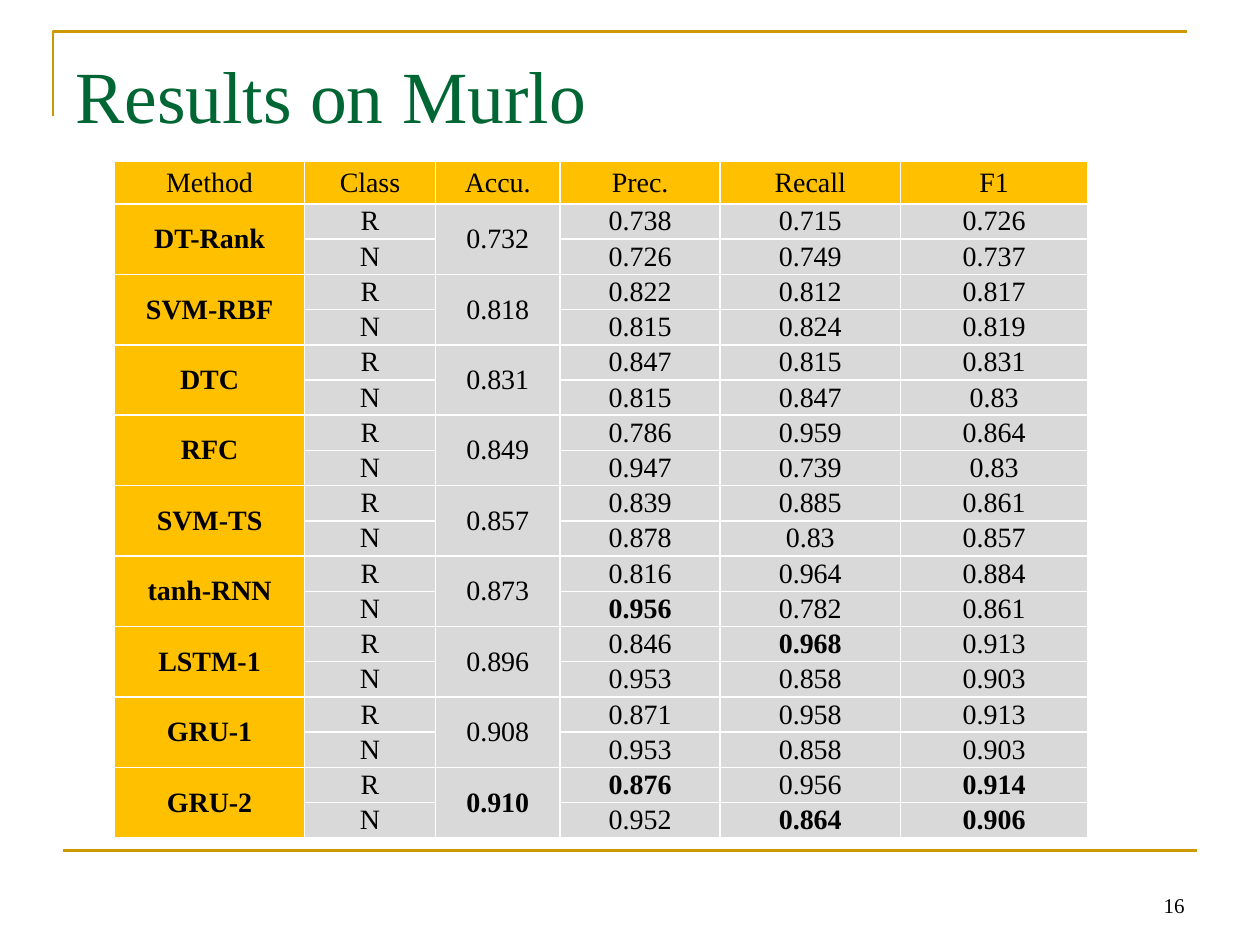
from pptx import Presentation
from pptx.dml.color import RGBColor as Rgb
from pptx.enum.shapes import MSO_CONNECTOR as Link
from pptx.enum.text import MSO_ANCHOR as Anchor, MSO_AUTO_SIZE as Auto, PP_ALIGN as Align
from pptx.util import Cm, Pt
from lxml.etree import SubElement as Sub
from pptx.oxml.ns import qn

theme = {
    "font": "Times New Roman",
    "green": Rgb(0x00, 0x66, 0x33),
    "black": Rgb(0, 0, 0),
    "rule": Rgb(0xCC, 0x99, 0x00),
    "gold": Rgb(0xFF, 0xC0, 0x00),
    "gray": Rgb(0xD9, 0xD9, 0xD9),
    "edge": "FFFFFF",
    "title": Pt(42),
    "cell": Pt(16),
    "page": Pt(12),
    "thin": Pt(1),
    "line": Pt(1.5),
}

heads = ["Method", "Class", "Accu.", "Prec.", "Recall", "F1"]
widths = [3.83, 2.64, 2.51, 3.23, 3.63, 3.78]
data = [
    ("DT-Rank", "0.732", "0.738 0.715 0.726", "0.726 0.749 0.737"),
    ("SVM-RBF", "0.818", "0.822 0.812 0.817", "0.815 0.824 0.819"),
    ("DTC", "0.831", "0.847 0.815 0.831", "0.815 0.847 0.83"),
    ("RFC", "0.849", "0.786 0.959 0.864", "0.947 0.739 0.83"),
    ("SVM-TS", "0.857", "0.839 0.885 0.861", "0.878 0.83 0.857"),
    ("tanh-RNN", "0.873", "0.816 0.964 0.884", "0.956* 0.782 0.861"),
    ("LSTM-1", "0.896", "0.846 0.968* 0.913", "0.953 0.858 0.903"),
    ("GRU-1", "0.908", "0.871 0.958 0.913", "0.953 0.858 0.903"),
    ("GRU-2", "0.910*", "0.876* 0.956 0.914*", "0.952 0.864* 0.906*"),
]


def write(frame, text, size, color, align, bold=False):
    para = frame.paragraphs[0]
    para.alignment = align
    run = para.add_run()
    run.text = text
    form = {"name": theme["font"], "size": theme[size], "bold": bold}
    for key, val in form.items():
        setattr(run.font, key, val)
    run.font.color.rgb = theme[color]


def trim(cell):
    props = cell._tc.get_or_add_tcPr()
    for pos, side in enumerate(["lnL", "lnR", "lnT", "lnB"]):
        line = Sub(props, qn(f"a:{side}"), w=str(theme["thin"]))
        Sub(Sub(line, qn("a:solidFill")), qn("a:srgbClr"), val=theme["edge"])
        props.remove(line)
        props.insert(pos, line)


deck = Presentation()
deck.slide_width, deck.slide_height = Cm(25.4), Cm(19.05)
slide = deck.slides.add_slide(deck.slide_layouts[5])
shapes = slide.shapes

pen = shapes.build_freeform(Cm(1.07), Cm(2.34))
pen.add_line_segments([(Cm(1.07), Cm(0.64)), (Cm(23.93), Cm(0.64))], close=False)
frame = pen.convert_to_shape()
frame.shadow.inherit = False
frame.fill.background()
base = shapes.add_connector(Link.STRAIGHT, Cm(1.27), Cm(17.15), Cm(24.13), Cm(17.15))
Sub(base._element.spPr, qn("a:effectLst"))
for rule in (frame, base):
    rule.line.color.rgb = theme["rule"]
    rule.line.width = theme["line"]

title = shapes.title
place = {"left": Cm(1.27), "top": Cm(0.76), "width": Cm(22.86), "height": Cm(2.16)}
for key, val in place.items():
    setattr(title, key, val)
page = shapes.add_textbox(Cm(18.21), Cm(17.35), Cm(5.92), Cm(1.27))
form = {"word_wrap": True, "auto_size": Auto.NONE, "vertical_anchor": Anchor.BOTTOM}
for box in (title, page):
    for key, val in form.items():
        setattr(box.text_frame, key, val)
write(title.text_frame, "Results on Murlo", "title", "green", Align.LEFT)
write(page.text_frame, "16", "page", "black", Align.RIGHT)

rows = [heads]
for name, accu, rumor, non in data:
    rows.append([name, "R", accu, *rumor.split()])
    rows.append(["", "N", "", *non.split()])

high = [0.85] + [0.71] * (len(rows) - 1)
table = shapes.add_table(len(rows), len(heads), Cm(2.31), Cm(3.26),
                         Cm(sum(widths)), Cm(sum(high))).table
table.first_row = table.horz_banding = False
for col, width in zip(table.columns, widths):
    col.width = Cm(width)
for row, tall in zip(table.rows, high):
    row.height = Cm(tall)

for r, row in enumerate(rows):
    for c, text in enumerate(row):
        cell = table.cell(r, c)
        pad = Cm(0.02) if r and c > 2 else 0
        form = {"margin_left": pad, "margin_right": pad, "margin_top": pad,
                "margin_bottom": pad, "vertical_anchor": Anchor.MIDDLE}
        for key, val in form.items():
            setattr(cell, key, val)
        cell.fill.solid()
        cell.fill.fore_color.rgb = theme["gold" if r == 0 or c == 0 else "gray"]
        trim(cell)
        if text:
            bold = text.endswith("*") or (r > 0 and c == 0)
            write(cell.text_frame, text.rstrip("*"), "cell", "black", Align.CENTER, bold)

for r in range(1, len(rows), 2):
    for c in (0, 2):
        table.cell(r, c).merge(table.cell(r + 1, c))

deck.save("out.pptx")
